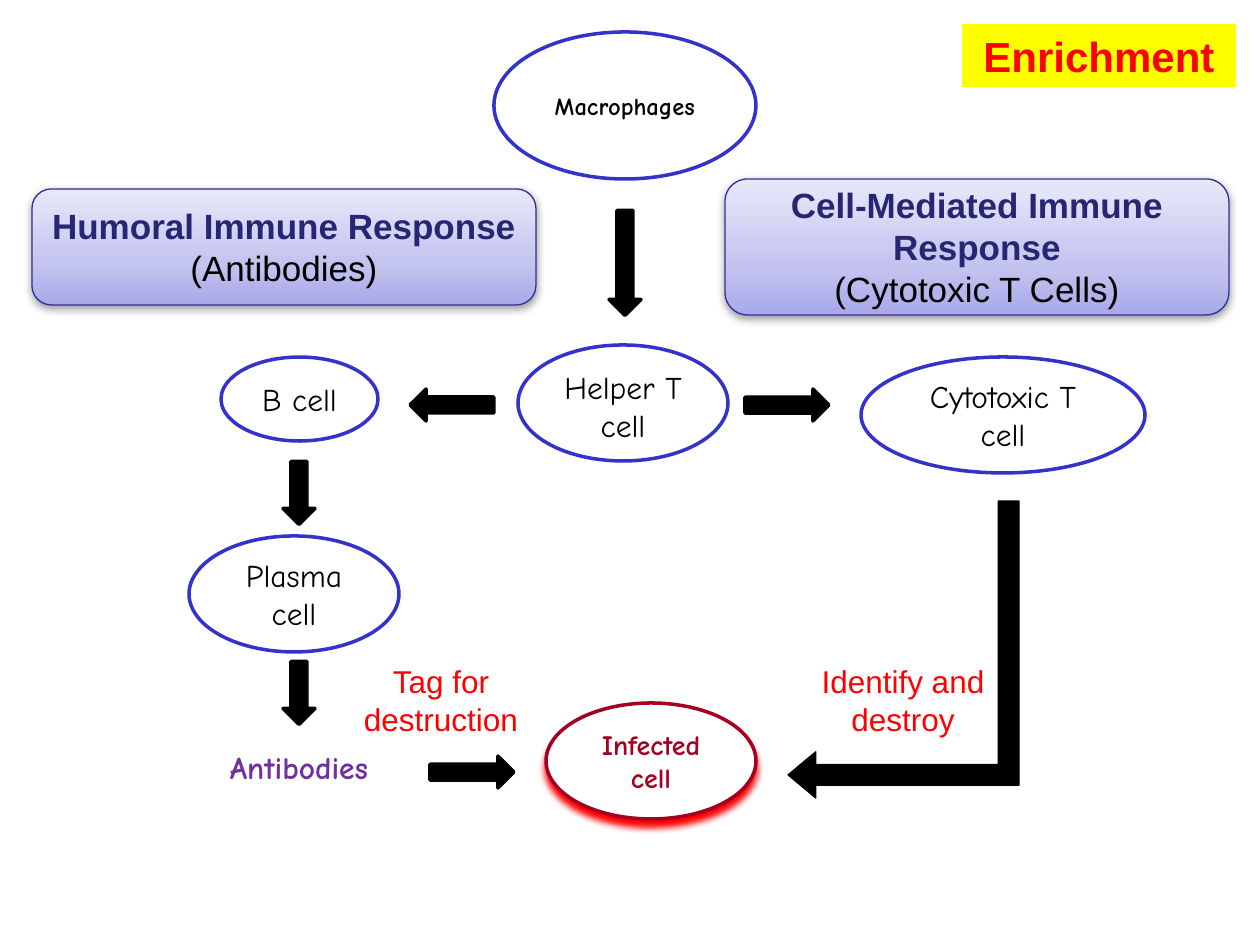
"""Build the immune response flow chart slide."""
from copy import deepcopy

from lxml import etree
from pptx import Presentation
from pptx.dml.color import RGBColor
from pptx.enum.shapes import MSO_SHAPE
from pptx.enum.text import MSO_ANCHOR, PP_ALIGN
from pptx.oxml.ns import qn
from pptx.util import Emu, Pt

SCALE = 914400 / 126
OVAL, RECT, ROUND = MSO_SHAPE.OVAL, MSO_SHAPE.RECTANGLE, MSO_SHAPE.ROUNDED_RECTANGLE
DOWN, BENT = MSO_SHAPE.DOWN_ARROW, MSO_SHAPE.BENT_UP_ARROW
TOP, MIDDLE, CENTER = MSO_ANCHOR.TOP, MSO_ANCHOR.MIDDLE, PP_ALIGN.CENTER

COLORS = {
    "white": "FFFFFF", "black": "000000", "blue": "3333CC", "navy": "262673",
    "edge": "2F2F98", "maroon": "A50021", "red": "FF0000", "purple": "7030A0",
    "yellow": "FFFF00", "deep": "A8A8EA", "mid": "C3C3EF", "pale": "E8E8FA",
}
STOPS = [(0, "deep"), (0.35, "mid"), (1, "pale")]
FORMATS = {
    "cell": {"name": "Comic Neue", "size": Pt(18), "bold": False, "color": "black"},
    "macrophage": {"name": "Comic Neue", "size": Pt(14), "bold": True, "color": "black"},
    "infected": {"name": "Comic Neue", "size": Pt(16), "bold": True, "color": "maroon"},
    "antibody": {"name": "Comic Neue", "size": Pt(18), "bold": True, "color": "purple"},
    "heading": {"name": "Arial", "size": Pt(20), "bold": True, "color": "navy"},
    "subheading": {"name": "Arial", "size": Pt(20), "bold": False, "color": "black"},
    "action": {"name": "Arial", "size": Pt(18), "bold": False, "color": "red"},
    "tag": {"name": "Arial", "size": Pt(24), "bold": True, "color": "red"},
}
RESPONSES = [
    ("Humoral Immune Response", "(Antibodies)", (32, 189, 504, 116)),
    ("Cell-Mediated Immune Response", "(Cytotoxic T Cells)", (725, 179, 504, 136)),
]
CELLS = [
    ("Macrophages", "macrophage", (494, 32, 262, 147), "blue", MIDDLE),
    ("Helper T cell", "cell", (518, 345, 210, 116), "blue", TOP),
    ("B cell", "cell", (221, 357, 157, 84), "blue", MIDDLE),
    ("Cytotoxic T cell", "cell", (861, 357, 284, 116), "blue", MIDDLE),
    ("Plasma cell", "cell", (189, 536, 210, 116), "blue", MIDDLE),
    ("Infected cell", "infected", (546, 703, 210, 116), "maroon", MIDDLE),
    ("Antibodies", "antibody", (105, 730, 388, 73), "white", MIDDLE),
]
ARROWS = [
    (625, 263, 105, 0), (452, 405, 84, 90), (787, 405, 84, 270),
    (299, 493, 63, 0), (299, 693, 63, 0), (472, 772, 84, 270),
]
ARROW_W = 32
ACTIONS = [
    ("Identify and destroy", (777, 656, 252, 89)),
    ("Tag for destruction", (315, 656, 252, 89)),
]


def px(n):
    return Emu(round(n * SCALE))


def rgb(name):
    return RGBColor.from_string(COLORS[name])


def add_shape(slide, kind, box, fill=None, line=None, width=2):
    sp = slide.shapes.add_shape(kind, *map(px, box))
    sp.shadow.inherit = False
    if fill:
        sp.fill.solid()
        sp.fill.fore_color.rgb = rgb(fill)
    if line:
        sp.line.color.rgb = rgb(line)
        sp.line.width = Pt(width)
    else:
        sp.line.fill.background()
    return sp


def add_text(sp, lines, anchor=MIDDLE):
    tf = sp.text_frame
    tf.word_wrap = True
    tf.vertical_anchor = anchor
    for i, (text, style) in enumerate(lines):
        p = tf.add_paragraph() if i else tf.paragraphs[0]
        p.alignment = CENTER
        r = p.add_run()
        r.text = text
        for key, value in FORMATS[style].items():
            if key == "color":
                r.font.color.rgb = rgb(value)
            else:
                setattr(r.font, key, value)


def add_shadow(sp, color, alpha, blur, dist):
    effects = sp._element.spPr.find(qn("a:effectLst"))
    shadow = etree.SubElement(effects, qn("a:outerShdw"), blurRad=str(Pt(blur)),
                              dist=str(Pt(dist)), dir="5400000", rotWithShape="0")
    clr = etree.SubElement(shadow, qn("a:srgbClr"), val=COLORS[color])
    etree.SubElement(clr, qn("a:alpha"), val=str(alpha * 1000))


def add_gradient(sp):
    sp.fill.gradient()
    sp.fill.gradient_angle = 90
    first = sp._element.spPr.find(".//" + qn("a:gs"))
    first.addnext(deepcopy(first))
    for stop, (position, color) in zip(sp.fill.gradient_stops, STOPS):
        stop.position = position
        stop.color.rgb = rgb(color)


def main():
    prs = Presentation()
    prs.slide_width, prs.slide_height = px(1260), px(945)
    s = prs.slides.add_slide(prs.slide_layouts[6])

    for heading, detail, box in RESPONSES:
        sp = add_shape(s, ROUND, box, line="edge", width=0.75)
        add_gradient(sp)
        add_shadow(sp, "black", 38, 5, 1.6)
        add_text(sp, [(heading, "heading"), (detail, "subheading")])

    for text, style, box, line, anchor in CELLS:
        sp = add_shape(s, OVAL, box, "white", line)
        add_text(sp, [(text, style)], anchor)
        if style == "infected":
            add_shadow(sp, "red", 100, 4, 4)

    for cx, cy, length, turn in ARROWS:
        box = (cx - ARROW_W / 2, cy - length / 2, ARROW_W, length)
        sp = add_shape(s, DOWN, box, "black", "black")
        sp.rotation = turn

    bent = add_shape(s, BENT, (755, 534, 297, 231), "black", "black", 0.75)
    bent.rotation = 270
    bent._element.spPr.find(qn("a:xfrm")).set("flipH", "1")
    for i, value in enumerate((0.09, 0.1, 0.12)):
        bent.adjustments[i] = value

    for text, box in ACTIONS:
        add_text(s.shapes.add_textbox(*map(px, box)), [(text, "action")], TOP)

    tag = add_shape(s, RECT, (962, 24, 274, 63), "yellow")
    add_text(tag, [("Enrichment", "tag")])
    prs.save("out.pptx")


if __name__ == "__main__":
    main()
